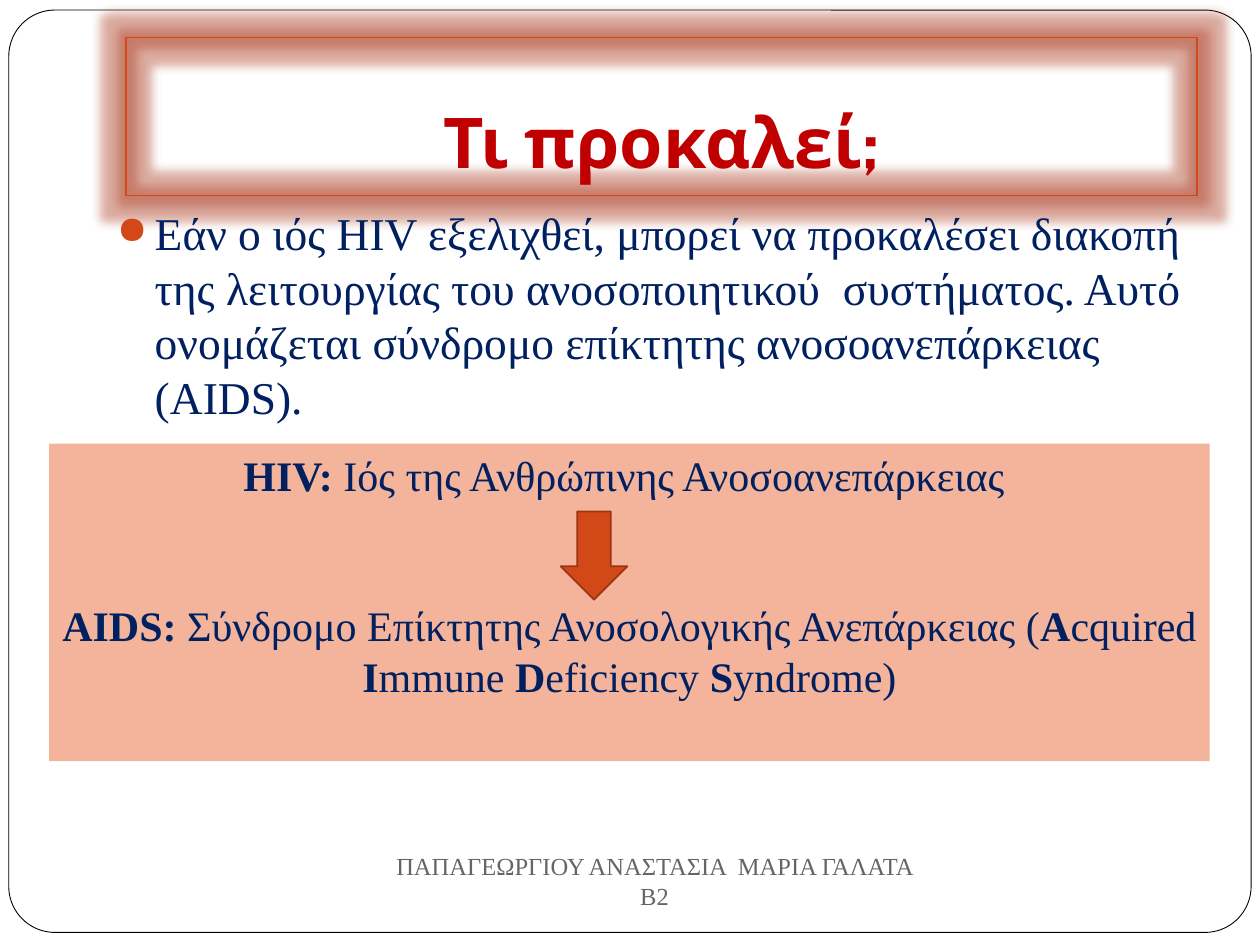
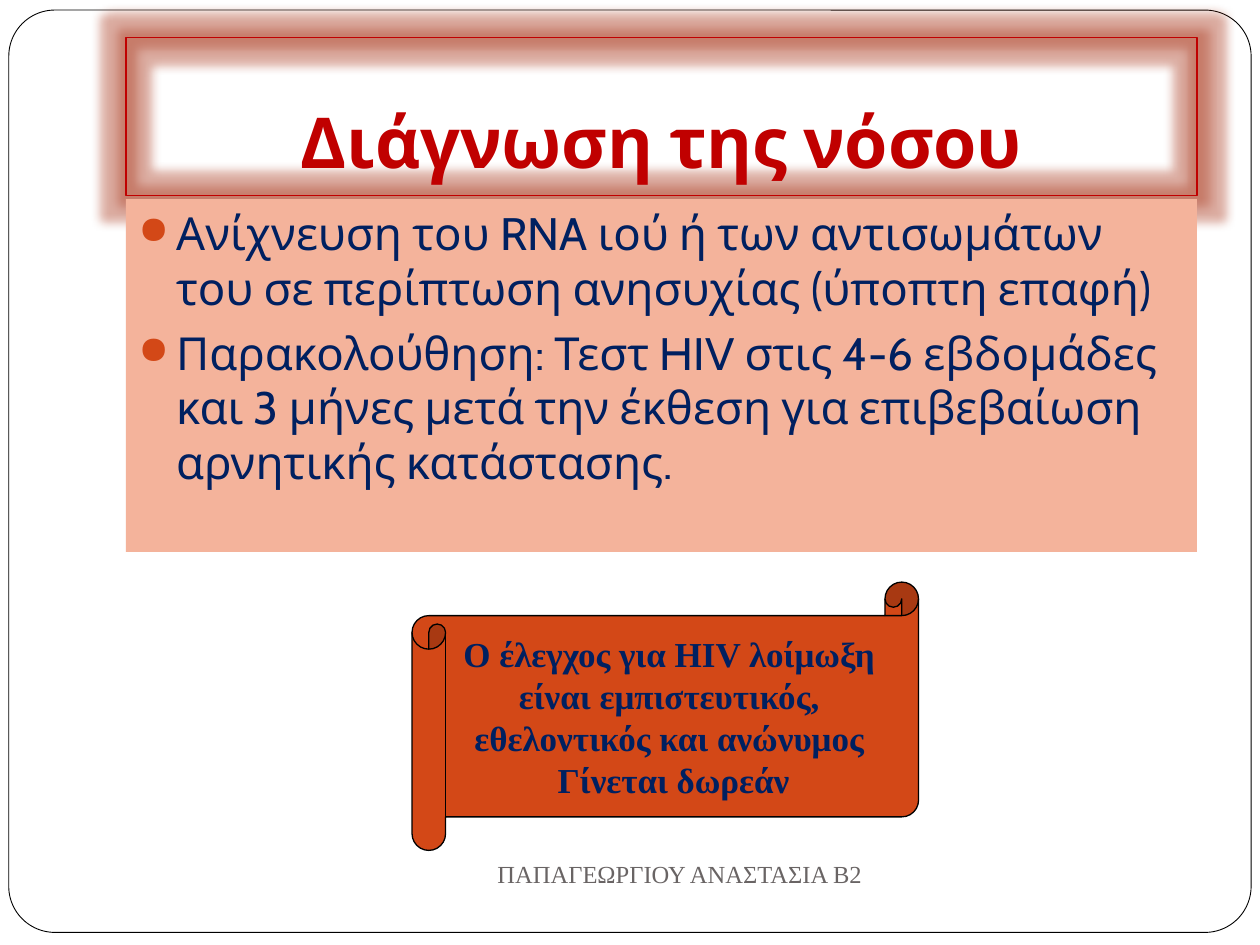
import pptx
import pptx.util
import pptx.dml.color
import pptx.enum.shapes
import pptx.enum.text
import pptx.oxml.ns
from lxml import etree

Inches = pptx.util.Inches
Pt = pptx.util.Pt
RGBColor = pptx.dml.color.RGBColor
SHAPE = pptx.enum.shapes.MSO_SHAPE
ANCHOR = pptx.enum.text.MSO_ANCHOR
ALIGN = pptx.enum.text.PP_ALIGN
qn = pptx.oxml.ns.qn

WHITE = RGBColor(0xFF, 0xFF, 0xFF)
BLACK = RGBColor(0x00, 0x00, 0x00)
ORANGE = RGBColor(0xD3, 0x48, 0x17)
DARK_ORANGE = RGBColor(0x9C, 0x35, 0x11)
GLOW = RGBColor(0xA8, 0x34, 0x18)
SALMON = RGBColor(0xF4, 0xB3, 0x9B)
RED = RGBColor(0xC0, 0x00, 0x00)
NAVY = RGBColor(0x00, 0x20, 0x60)
GREY = RGBColor(0x69, 0x64, 0x64)
SERIF = "Times New Roman"
SANS = "Cabin"


def add_box(page, kind, place, fill=None, line=None, width=0.75, anchor=ANCHOR.TOP):
    box = page.shapes.add_shape(kind, *[Inches(length) for length in place])
    box.shadow.inherit = False
    if fill is None:
        box.fill.background()
    else:
        box.fill.solid()
        box.fill.fore_color.rgb = fill
    if line is None:
        box.line.fill.background()
    else:
        box.line.color.rgb = line
        box.line.width = Pt(width)
    box.text_frame.word_wrap = True
    box.text_frame.vertical_anchor = anchor
    return box


def write(box, paragraphs, font, size, color, bullet=False, gap=0):
    """Each paragraph is a list of (text, bold) spans."""
    frame = box.text_frame
    for index, spans in enumerate(paragraphs):
        para = frame.add_paragraph() if index else frame.paragraphs[0]
        para.alignment = ALIGN.LEFT if bullet else ALIGN.CENTER
        if bullet:
            properties = para._p.get_or_add_pPr()
            properties.set("marL", str(Inches(0.3)))
            properties.set("indent", str(-Inches(0.3)))
            bullet_color = etree.SubElement(properties, qn("a:buClr"))
            etree.SubElement(bullet_color, qn("a:srgbClr"), val=str(ORANGE))
            etree.SubElement(properties, qn("a:buSzPct"), val="85000")
            etree.SubElement(properties, qn("a:buChar"), char="●")
        if index and gap:
            para.space_before = Pt(gap)
        for text, bold in spans:
            span = para.add_run()
            span.text = text
            span.font.name = font
            span.font.size = Pt(size)
            span.font.bold = bold
            span.font.color.rgb = color


deck = pptx.Presentation()
deck.slide_width = Inches(10)
deck.slide_height = Inches(7.5)

# Shared frame, glowing title and footer
pages = []
for title, title_line, footer, footer_place in [
    ("Τι προκαλεί;", ORANGE, "ΠΑΠΑΓΕΩΡΓΙΟΥ ΑΝΑΣΤΑΣΙΑ  ΜΑΡΙΑ ΓΑΛΑΤΑ Β2", (3.03, 6.74, 4.33, 0.5)),
    ("Διάγνωση της νόσου", RED, "ΠΑΠΑΓΕΩΡΓΙΟΥ ΑΝΑΣΤΑΣΙΑ Β2", (3.19, 6.66, 4.41, 0.55)),
]:
    page = deck.slides.add_slide(deck.slide_layouts[6])
    pages.append(page)

    frame_box = add_box(page, SHAPE.ROUNDED_RECTANGLE, (0.07, 0.08, 9.86, 7.32), WHITE, BLACK, 0.5)
    frame_box.adjustments[0] = 0.05

    title_box = add_box(page, SHAPE.RECTANGLE, (1, 0.3, 8.5, 1.25), line=title_line, anchor=ANCHOR.BOTTOM)
    title_box.text_frame.margin_bottom = Inches(0.1)
    effects = title_box._element.spPr.find(qn("a:effectLst"))
    glow = etree.SubElement(effects, qn("a:glow"), rad=str(Pt(11)))
    glow_color = etree.SubElement(glow, qn("a:srgbClr"), val=str(GLOW))
    etree.SubElement(glow_color, qn("a:alpha"), val="40000")
    write(title_box, [[(title, True)]], SANS, 40, RED)

    footer_box = page.shapes.add_textbox(*[Inches(length) for length in footer_place])
    footer_box.text_frame.word_wrap = True
    footer_box.text_frame.vertical_anchor = ANCHOR.MIDDLE
    write(footer_box, [[(footer, False)]], SERIF, 14, GREY)

causes_page, diagnosis_page = pages

# Causes: body text
causes_body = add_box(causes_page, SHAPE.RECTANGLE, (0.83, 1.58, 8.67, 5))
write(causes_body, [[(
    "Εάν ο ιός HIV εξελιχθεί, μπορεί να προκαλέσει διακοπή της λειτουργίας του "
    "ανοσοποιητικού  συστήματος. Αυτό ονομάζεται σύνδρομο επίκτητης "
    "ανοσοανεπάρκειας (AIDS).", False)]], SERIF, 26, NAVY, bullet=True)

# Causes: definitions, with an arrow from HIV to AIDS
definitions = add_box(causes_page, SHAPE.RECTANGLE, (0.39, 3.52, 9.21, 2.52), SALMON)
write(definitions, [
    [("HIV:", True), (" Ιός της Ανθρώπινης Ανοσοανεπάρκειας ", False)],
    [("AIDS: ", True), ("Σύνδρομο Επίκτητης Ανοσολογικής Ανεπάρκειας (", False),
     ("A", True), ("cquired ", False), ("I", True), ("mmune ", False),
     ("D", True), ("eficiency ", False), ("S", True), ("yndrome)", False)],
], SERIF, 24, NAVY, gap=57)
add_box(causes_page, SHAPE.DOWN_ARROW, (4.45, 4.06, 0.53, 0.7), ORANGE, DARK_ORANGE, 1)

# Diagnosis: body text
diagnosis_body = add_box(diagnosis_page, SHAPE.RECTANGLE, (1, 1.58, 8.5, 2.8), SALMON)
write(diagnosis_body, [
    [("Ανίχνευση του RNA ιού ή των αντισωμάτων του σε περίπτωση ανησυχίας "
      "(ύποπτη επαφή)", False)],
    [("Παρακολούθηση: Τεστ HIV στις 4-6 εβδομάδες και 3 μήνες μετά την έκθεση "
      "για επιβεβαίωση αρνητικής κατάστασης.", False)],
], SANS, 26, NAVY, bullet=True, gap=5.8)

# Diagnosis: scroll
scroll = add_box(diagnosis_page, SHAPE.HORIZONTAL_SCROLL, (3.27, 4.62, 4.02, 2.13),
                 ORANGE, BLACK, anchor=ANCHOR.MIDDLE)
scroll.text_frame.word_wrap = False
scroll_lines = ["Ο έλεγχος για HIV λοίμωξη ", "είναι εμπιστευτικός, ",
                "εθελοντικός και ανώνυμος ", "Γίνεται δωρεάν"]
write(scroll, [[(line, True)] for line in scroll_lines], SERIF, 20, NAVY)

deck.save("out.pptx")
